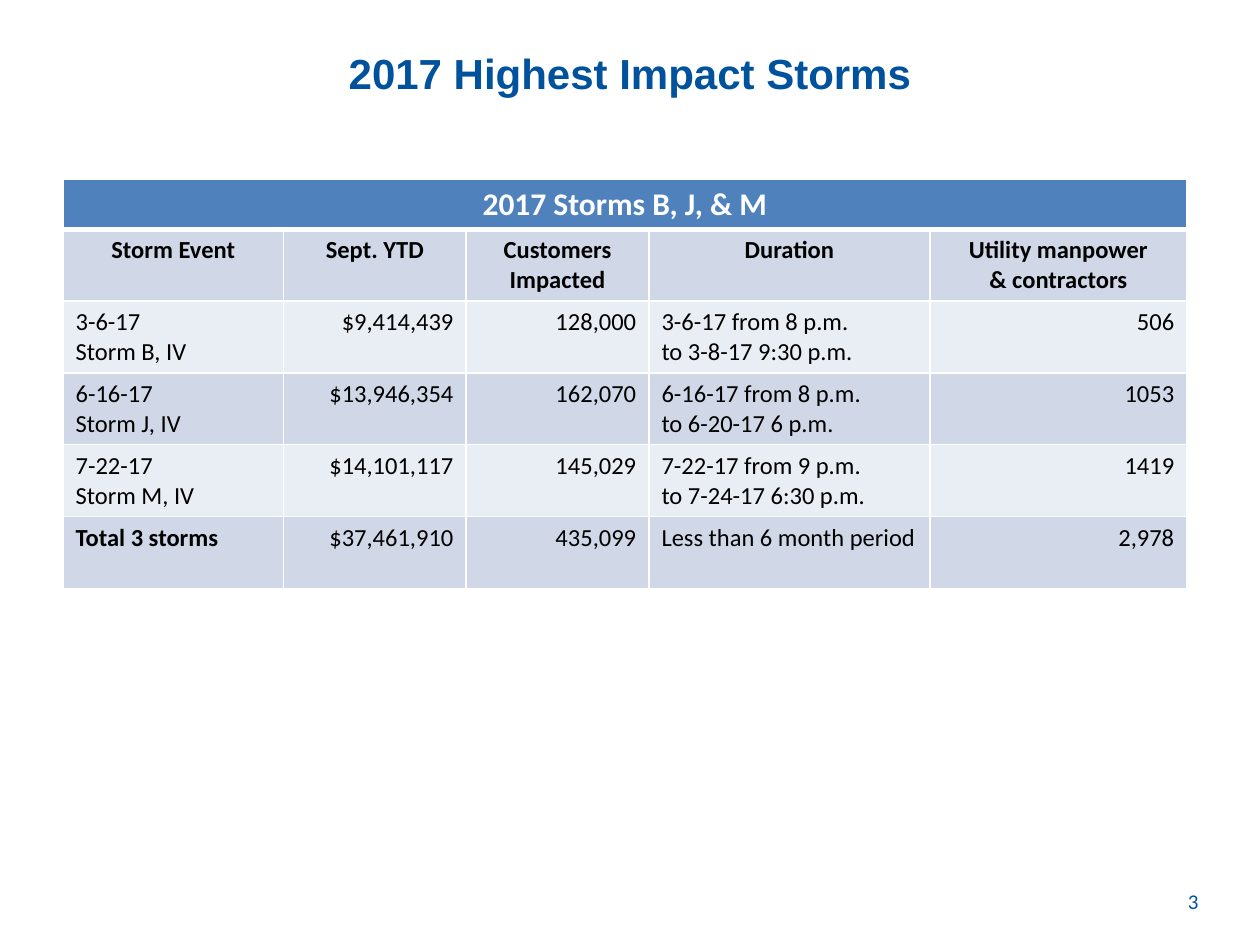
from dataclasses import dataclass

from lxml.etree import SubElement
from pptx import Presentation
from pptx.dml.color import RGBColor
from pptx.enum.text import MSO_ANCHOR, PP_ALIGN
from pptx.oxml.ns import qn
from pptx.util import Inches, Pt


@dataclass(frozen=True)
class Theme:
    blue: str = "00529C"
    header: str = "4F81BD"
    band_dark: str = "D0D8E8"
    band_light: str = "E9EDF4"
    white: str = "FFFFFF"
    black: str = "000000"
    title_font: str = "Arial"
    body_font: str = "Calibri"
    title_size: int = 24
    heading_size: int = 18
    body_size: int = 14
    number_size: int = 12


THEME = Theme()
LEFT, CENTER, RIGHT = PP_ALIGN.LEFT, PP_ALIGN.CENTER, PP_ALIGN.RIGHT

COLUMN_WIDTHS = [1.75, 1.45, 1.45, 2.23, 2.04]
COLUMN_ALIGNS = [LEFT, RIGHT, RIGHT, LEFT, RIGHT]
HEADING_HEIGHT, ROW_HEIGHT = 0.4, 0.57
HEADING = "2017 Storms B, J, & M"
ROWS = [
    ["Storm Event", "Sept. YTD", "Customers Impacted", "Duration",
     "Utility manpower\n& contractors"],
    ["3-6-17\nStorm B, IV", "$9,414,439", "128,000",
     "3-6-17 from 8 p.m.\nto 3-8-17 9:30 p.m.", "506"],
    ["6-16-17\nStorm J, IV", "$13,946,354", "162,070",
     "6-16-17 from 8 p.m.\nto 6-20-17 6 p.m.", "1053"],
    ["7-22-17\nStorm M, IV", "$14,101,117", "145,029",
     "7-22-17 from 9 p.m.\nto 7-24-17 6:30 p.m.", "1419"],
    ["Total 3 storms", "$37,461,910", "435,099",
     "Less than 6 month period", "2,978"],
]


def write(tf, text, align, color, **font):
    """Fill a text frame with one paragraph for each line of text."""
    tf.word_wrap = True
    tf.text = text
    for p in tf.paragraphs:
        p.alignment = align
        for r in p.runs:
            r.font.color.rgb = RGBColor.from_string(color)
            for name, value in font.items():
                setattr(r.font, name, value)


def add_text(s, box, text, align, color, anchor, margin_top=0.05, **font):
    tf = s.shapes.add_textbox(*map(Inches, box)).text_frame
    tf.vertical_anchor = anchor
    tf.margin_top = Inches(margin_top)
    write(tf, text, align, color, **font)


def style_cell(cell, fill, bottom=1):
    """Give a cell white borders and a solid fill."""
    tc_pr = cell._tc.get_or_add_tcPr()
    for side, width in {"L": 1, "R": 1, "T": 1, "B": bottom}.items():
        ln = SubElement(tc_pr, qn(f"a:ln{side}"), w=str(Pt(width)))
        solid = SubElement(ln, qn("a:solidFill"))
        SubElement(solid, qn("a:srgbClr"), val=THEME.white)
    cell.fill.solid()
    cell.fill.fore_color.rgb = RGBColor.from_string(fill)


def add_storm_table(s, box):
    table = s.shapes.add_table(
        len(ROWS) + 1, len(COLUMN_WIDTHS), *map(Inches, box)).table
    for column, width in zip(table.columns, COLUMN_WIDTHS):
        column.width = Inches(width)
    for i, row in enumerate(table.rows):
        row.height = Inches(ROW_HEIGHT if i else HEADING_HEIGHT)

    for cell in table.rows[0].cells:
        style_cell(cell, THEME.header, bottom=3)
    heading = table.cell(0, 0)
    heading.merge(table.cell(0, len(COLUMN_WIDTHS) - 1))
    write(heading.text_frame, HEADING, CENTER, THEME.white, bold=True,
          name=THEME.body_font, size=Pt(THEME.heading_size))

    for i, values in enumerate(ROWS):
        is_header, is_total = i == 0, i == len(ROWS) - 1
        for j, value in enumerate(values):
            cell = table.cell(i + 1, j)
            style_cell(cell, THEME.band_light if i % 2 else THEME.band_dark)
            write(cell.text_frame, value,
                  CENTER if is_header else COLUMN_ALIGNS[j], THEME.black,
                  bold=is_header or (is_total and j == 0),
                  name=THEME.body_font, size=Pt(THEME.body_size))


def build_storm_slide(prs):
    s = prs.slides.add_slide(prs.slide_layouts[6])
    add_text(s, (0.5, 0.3, 9, 1.25), "2017 Highest Impact Storms", CENTER,
             THEME.blue, MSO_ANCHOR.TOP, margin_top=0.08, bold=True,
             name=THEME.title_font, size=Pt(THEME.title_size))
    add_storm_table(s, (0.5, 1.42, sum(COLUMN_WIDTHS),
                        HEADING_HEIGHT + ROW_HEIGHT * len(ROWS)))
    add_text(s, (7.28, 6.95, 2.33, 0.4), "3", RIGHT, THEME.blue,
             MSO_ANCHOR.MIDDLE, name=THEME.body_font,
             size=Pt(THEME.number_size))


def main():
    prs = Presentation()
    prs.slide_width, prs.slide_height = Inches(10), Inches(7.5)
    build_storm_slide(prs)
    prs.save("out.pptx")


if __name__ == "__main__":
    main()
